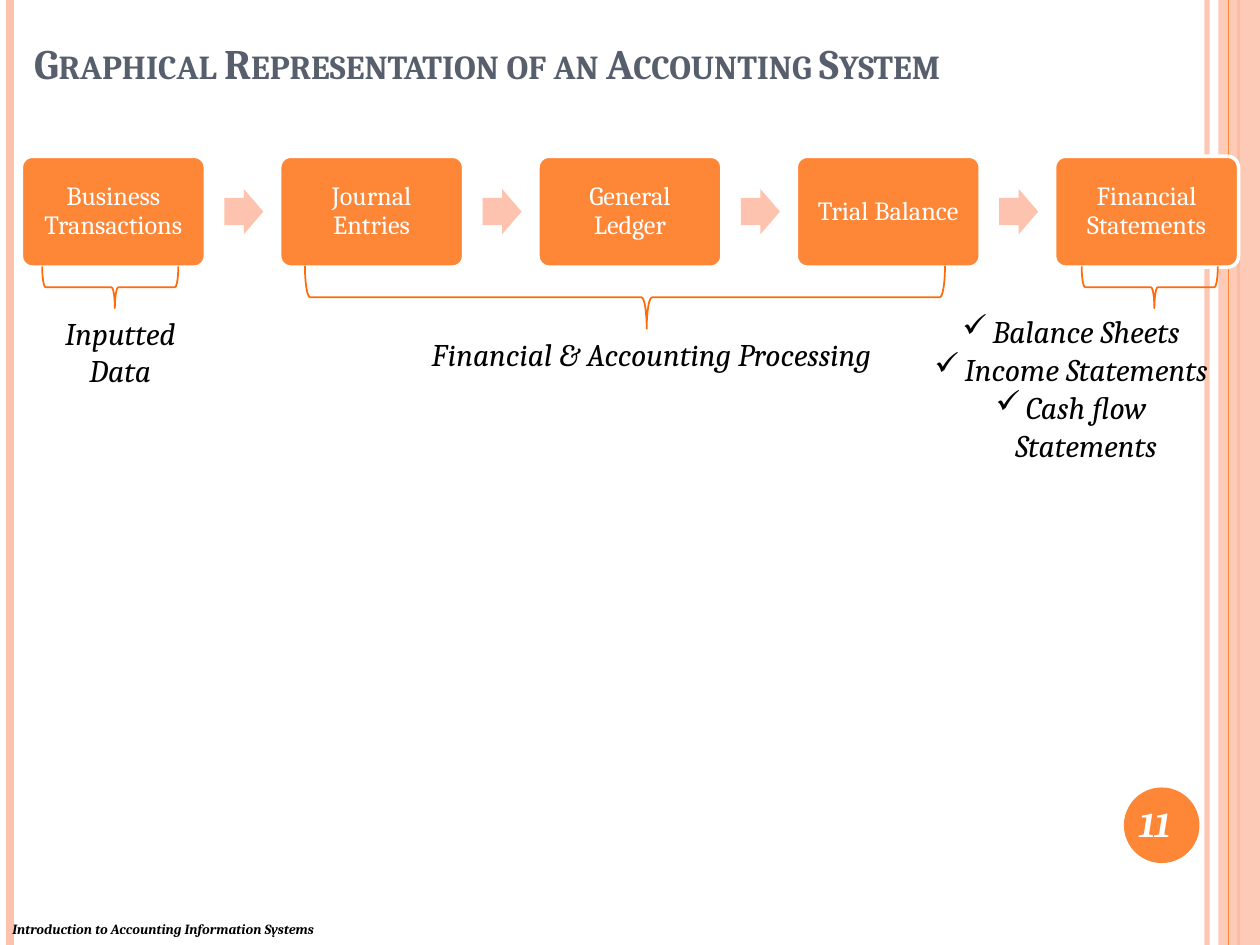
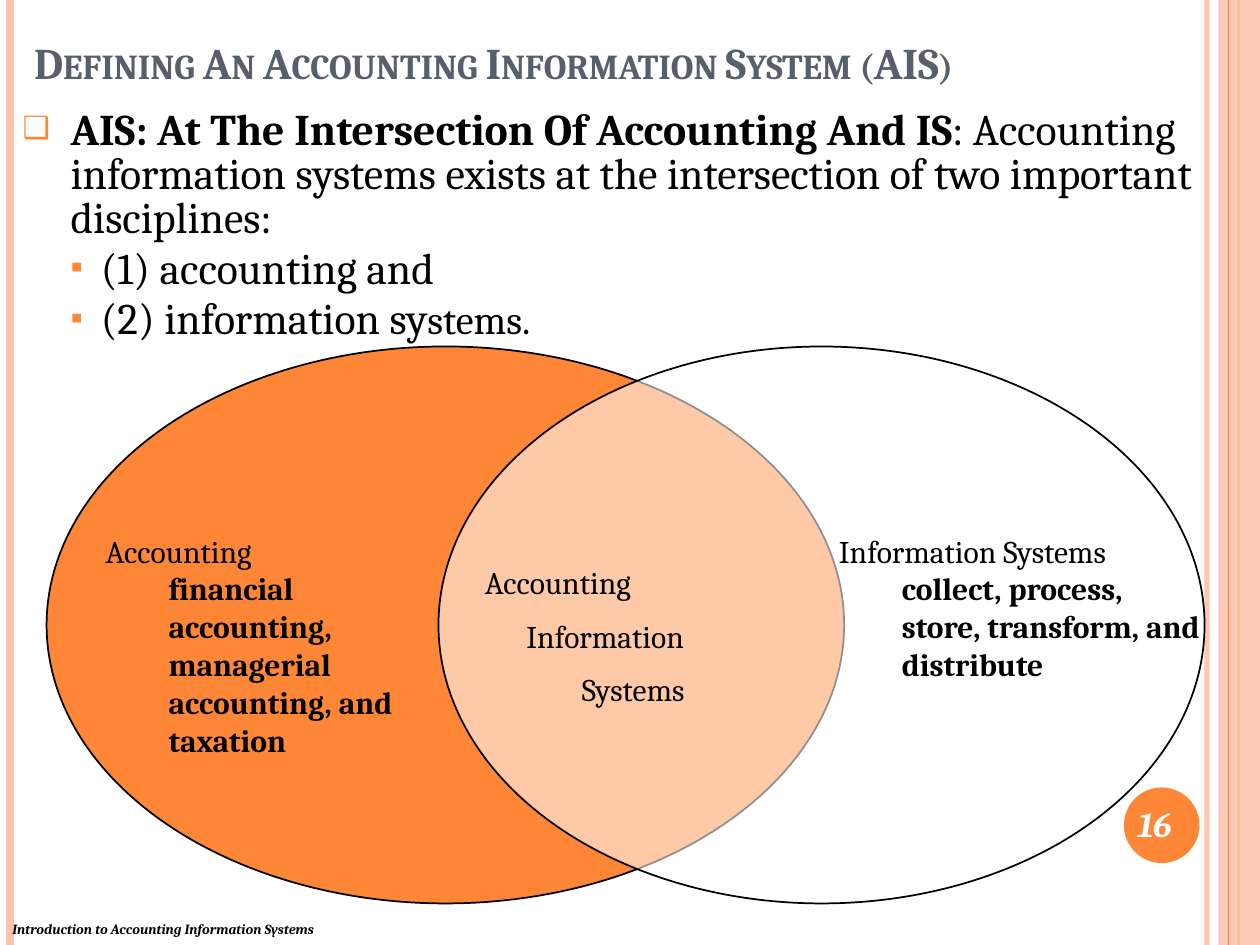
from dataclasses import dataclass
from typing import Optional

from lxml import etree
from pptx import Presentation
from pptx.dml.color import RGBColor
from pptx.enum.shapes import MSO_CONNECTOR, MSO_SHAPE
from pptx.enum.text import MSO_ANCHOR, MSO_AUTO_SIZE, PP_ALIGN
from pptx.oxml.ns import qn
from pptx.util import Inches, Pt

LINE = MSO_CONNECTOR.STRAIGHT
RECTANGLE, ELLIPSE = MSO_SHAPE.RECTANGLE, MSO_SHAPE.OVAL
ROUNDED, ARROW = MSO_SHAPE.ROUNDED_RECTANGLE, MSO_SHAPE.RIGHT_ARROW
BRACE = MSO_SHAPE.LEFT_BRACE
LEFT, CENTER = PP_ALIGN.LEFT, PP_ALIGN.CENTER
TOP, MIDDLE, BOTTOM = MSO_ANCHOR.TOP, MSO_ANCHOR.MIDDLE, MSO_ANCHOR.BOTTOM
NO_AUTOFIT = MSO_AUTO_SIZE.NONE

FONT = "Cambria"
ORANGE, DEEP_ORANGE, PEACH = "FE8637", "FF6B0A", "FEC3AE"
SLATE, BLACK, WHITE = "575F6D", "000000", "FFFFFF"
TITLE_ONLY, TITLE_AND_BODY = 5, 1
FOOTER = "Introduction to Accounting Information Systems"


@dataclass
class Span:
    text: str
    size: float = 18
    color: str = BLACK
    bold: bool = False
    italic: bool = False
    small_caps: bool = False


@dataclass
class Bullet:
    char: str
    color: Optional[str] = None
    percent: int = 100


@dataclass
class Para:
    spans: list[Span]
    align: PP_ALIGN = LEFT
    level: int = 0
    margin: float = 0
    indent: float = 0
    before: float = 0
    after: float = 0
    line_spacing: Optional[float | Pt] = None
    bullet: Optional[Bullet] = None


@dataclass
class Frame:
    left: float
    top: float
    width: float
    height: float

    def lengths(self) -> list[int]:
        return [Inches(v) for v in (self.left, self.top, self.width, self.height)]


@dataclass
class Band:
    x: float
    color: str
    weight: float
    opacity: int = 100


@dataclass
class Brace:
    frame: Frame
    label_frame: Frame
    label: list[Para]


def paint(color_format, color: str, opacity: int = 100) -> None:
    color_format.rgb = RGBColor.from_string(color)


def paint_fill(fill, color: str, opacity: int = 100) -> None:
    fill.solid()
    fill.fore_color.rgb = RGBColor.from_string(color)
    if opacity < 100:
        # python-pptx has no public transparency setting
        rgb = fill._xPr.find(".//" + qn("a:srgbClr"))
        etree.SubElement(rgb, qn("a:alpha")).set("val", str(opacity * 1000))


def add_bullet(para, bullet: Bullet) -> None:
    props = para._p.get_or_add_pPr()
    if bullet.color:
        color = etree.SubElement(props, qn("a:buClr"))
        etree.SubElement(color, qn("a:srgbClr")).set("val", bullet.color)
    etree.SubElement(props, qn("a:buSzPct")).set("val", str(bullet.percent * 1000))
    etree.SubElement(props, qn("a:buChar")).set("char", bullet.char)


def write(shape, paras: list[Para], anchor: MSO_ANCHOR = TOP,
          inset: Optional[float] = None) -> None:
    text = shape.text_frame
    text.auto_size = NO_AUTOFIT
    text.word_wrap = True
    text.vertical_anchor = anchor
    if inset is not None:
        text.margin_left = text.margin_right = Inches(inset)
        text.margin_top = text.margin_bottom = Inches(inset)
    for index, item in enumerate(paras):
        para = text.add_paragraph() if index else text.paragraphs[0]
        para.alignment, para.level = item.align, item.level
        para.space_before, para.space_after = Pt(item.before), Pt(item.after)
        para.line_spacing = item.line_spacing
        props = para._p.get_or_add_pPr()
        props.set("marL", str(Inches(item.margin)))
        props.set("indent", str(Inches(item.indent)))
        if item.bullet:
            add_bullet(para, item.bullet)
        for span in item.spans:
            run = para.add_run()
            run.text = span.text
            font = run.font
            font.name, font.size = FONT, Pt(span.size)
            font.bold, font.italic = span.bold, span.italic
            font.color.rgb = RGBColor.from_string(span.color)
            if span.small_caps:
                font._element.set("cap", "small")


def add_text(slide, frame: Frame, paras: list[Para], anchor: MSO_ANCHOR = TOP) -> None:
    write(slide.shapes.add_textbox(*frame.lengths()), paras, anchor)


def add_figure(slide, kind, frame: Frame, fill: Optional[str] = None,
               line: Optional[str] = None, weight: float = 1,
               opacity: int = 100, adjust: tuple[float, ...] = ()):
    shape = slide.shapes.add_shape(kind, *frame.lengths())
    shape.shadow.inherit = False
    if fill:
        paint_fill(shape.fill, fill, opacity)
    else:
        shape.fill.background()
    if line:
        paint_fill(shape.line.fill, line)
        shape.line.width = Pt(weight)
    else:
        shape.line.fill.background()
    for index, value in enumerate(adjust):
        shape.adjustments[index] = value
    return shape


def add_band(slide, band: Band) -> None:
    x = Inches(band.x)
    line = slide.shapes.add_connector(LINE, x, 0, x, Inches(7.5))
    paint_fill(line.line.fill, band.color, band.opacity)
    line.line.width = Pt(band.weight)
    etree.SubElement(line._element.spPr, qn("a:effectLst"))


def add_page(deck, layout: int, title: str, title_size: float, number: int):
    """Start a slide with the side bands, title, page number and footer."""
    slide = deck.slides.add_slide(deck.slide_layouts[layout])
    for band in (Band(9.58, PEACH, 3, 93), Band(0.08, PEACH, 4.5), Band(9.83, ORANGE, 1.5)):
        add_band(slide, band)
    add_figure(slide, RECTANGLE, Frame(9.67, 0, 0.33, 7.5), PEACH, opacity=87)
    add_band(slide, Band(9.75, ORANGE, 0.75))
    add_figure(slide, ELLIPSE, Frame(8.92, 6.25, 0.6, 0.6), ORANGE)

    place(slide.shapes.title, Frame(0.17, -0.08, 9.67, 0.83))
    heading = Span(title, title_size, SLATE, bold=True, small_caps=True)
    write(slide.shapes.title, [Para([heading], before=1, after=1)], BOTTOM)

    page_number = Span(str(number), 20, WHITE, bold=True, italic=True)
    add_text(slide, Frame(8.83, 6.25, 0.67, 0.57), [Para([page_number], CENTER)], MIDDLE)
    footer = Span(FOOTER, 8, bold=True, italic=True)
    add_text(slide, Frame(0, 7.26, 10, 0.24), [Para([footer])])
    return slide


def place(shape, frame: Frame) -> None:
    shape.left, shape.top, shape.width, shape.height = frame.lengths()


def caption(text: str, **style) -> Para:
    return Para([Span(text, italic=True)], CENTER, **style)


def build_process(deck) -> None:
    slide = add_page(deck, TITLE_ONLY,
                     "Graphical Representation of an Accounting System", 24, 11)

    # Five steps with an arrow in each gap
    steps = ("Business Transactions", "Journal Entries", "General Ledger",
             "Trial Balance", "Financial Statements")
    pitch = 2.05
    for index, step in enumerate(steps):
        box = add_figure(slide, ROUNDED, Frame(0.17 + index * pitch, 1.24, 1.46, 0.88),
                         ORANGE, WHITE, 2, adjust=(0.1,))
        write(box, [Para([Span(step, 15, WHITE)], CENTER, line_spacing=0.9)], MIDDLE, 0.08)
        if index < len(steps) - 1:
            add_figure(slide, ARROW, Frame(1.78 + index * pitch, 1.5, 0.31, 0.36),
                       PEACH, adjust=(0.6, 0.5))

    # Braces under the steps, with their captions
    statements = [caption(text, margin=0.24, indent=-0.24, bullet=Bullet("✓"))
                  for text in ("Balance Sheets", "Income Statements", "Cash flow Statements")]
    braces = (
        Brace(Frame(0.71, 1.74, 0.33, 1.08), Frame(0.33, 2.44, 1.25, 0.71),
              [caption("Inputted Data")]),
        Brace(Frame(4.71, -0.18, 0.5, 5.08), Frame(3.17, 2.61, 4, 0.4),
              [caption("Financial & Accounting Processing")]),
        Brace(Frame(8.96, 1.74, 0.33, 1.08), Frame(7.25, 2.43, 2.5, 1.01), statements),
    )
    for brace in braces:
        shape = add_figure(slide, BRACE, brace.frame, line=DEEP_ORANGE, adjust=(0.083, 0.534))
        shape.rotation = 270
        add_text(slide, brace.label_frame, brace.label)


def build_definition(deck) -> None:
    slide = add_page(deck, TITLE_AND_BODY,
                     "Defining An Accounting Information System (AIS)", 25, 16)

    # Definition with its two disciplines
    spacing = {"before": 2, "after": 2, "line_spacing": Pt(25)}
    sub_level = {"level": 1, "margin": 0.62, "indent": -0.24,
                 "bullet": Bullet("▪", ORANGE, 80), **spacing}
    body = slide.placeholders[1]
    place(body, Frame(0.08, 0.83, 9.58, 6.25))
    write(body, [
        Para([Span("AIS: At The Intersection Of Accounting And IS", 25, bold=True),
              Span(": Accounting information systems exists at the intersection of "
                   "two important disciplines:", 25)],
             margin=0.38, indent=-0.38, bullet=Bullet("❑", ORANGE, 70), **spacing),
        Para([Span("(1) accounting and", 25)], **sub_level),
        Para([Span("(2) information sy", 25), Span("stems.", 23)], **sub_level),
    ])

    # Overlapping disciplines
    add_figure(slide, ELLIPSE, Frame(0.37, 2.75, 6.33, 4.42), ORANGE, BLACK)
    add_figure(slide, ELLIPSE, Frame(3.48, 2.75, 6.08, 4.42), WHITE, BLACK, opacity=56)

    overlap = (("Accounting", 0), ("Information", 0.33), ("Systems", 0.77))
    add_text(slide, Frame(3.75, 4.42, 2.67, 1.31),
             [Para([Span(word)], margin=margin, before=9) for word, margin in overlap])
    disciplines = (
        (Frame(0.74, 4.17, 3, 1.92), "Accounting",
         ("financial accounting,", "managerial accounting, and taxation")),
        (Frame(6.56, 4.17, 3.08, 1.31), "Information Systems",
         ("collect, process, store, transform, and distribute",)),
    )
    for frame, name, topics in disciplines:
        details = [Para([Span(topic, bold=True)], level=1, margin=0.5) for topic in topics]
        add_text(slide, frame, [Para([Span(name)], before=9), *details])


def main() -> None:
    deck = Presentation()
    deck.slide_width, deck.slide_height = Inches(10), Inches(7.5)
    build_process(deck)
    build_definition(deck)
    deck.save("out.pptx")


if __name__ == "__main__":
    main()
